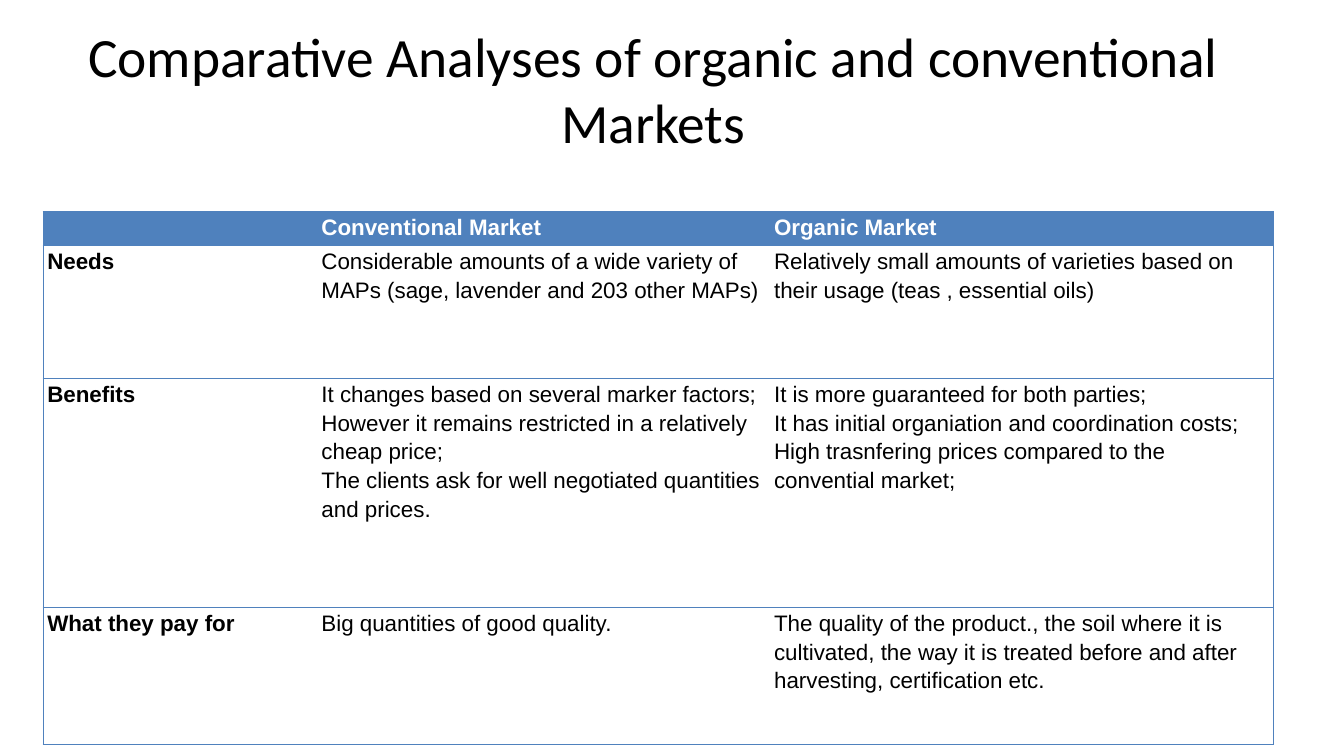
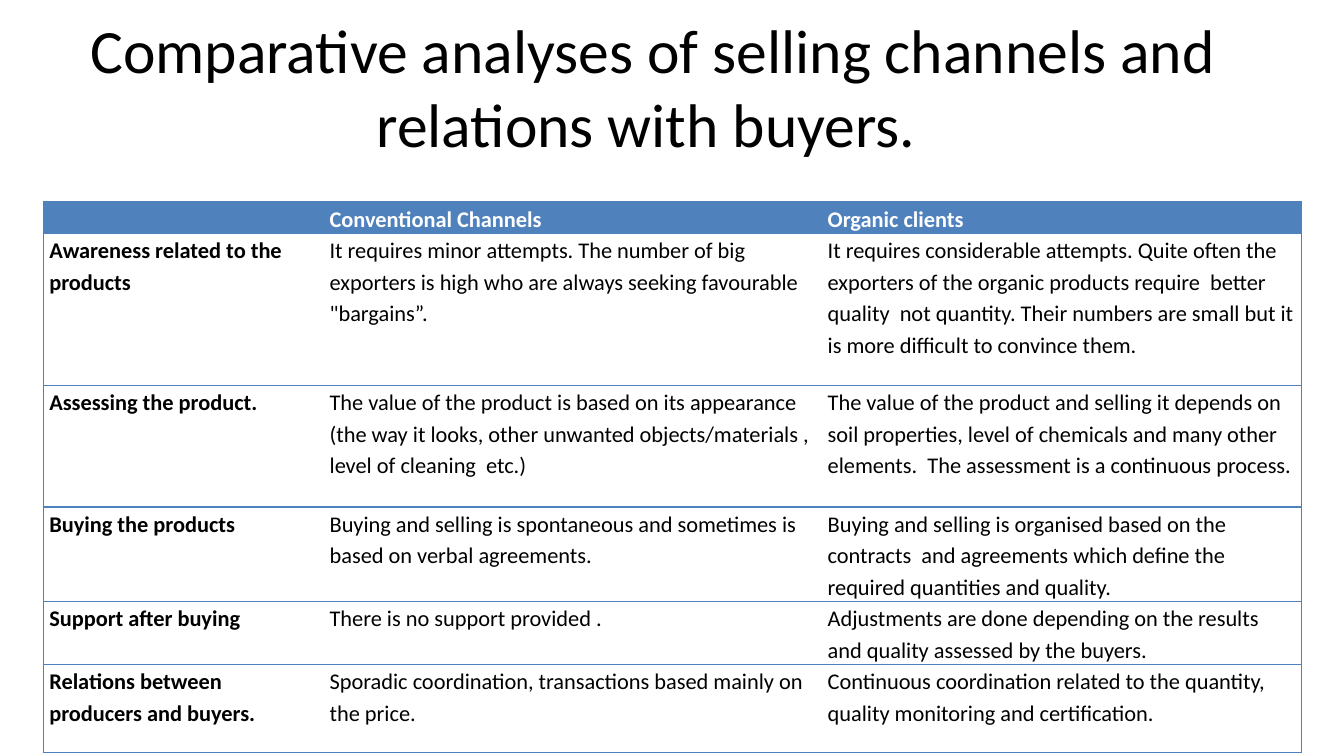
from lxml.etree import SubElement
from pptx import Presentation
from pptx.dml.color import RGBColor
from pptx.enum.text import MSO_ANCHOR, MSO_AUTO_SIZE, PP_ALIGN
from pptx.oxml.ns import qn
from pptx.util import Inches, Pt

HUES = {"ink": "000000", "blue": "4F81BD", "paper": "FFFFFF"}


def style(font, face, size, hue, bold=False):
    font.name = face
    font.size = Pt(size)
    font.bold = bold
    font.color.rgb = RGBColor.from_string(HUES[hue])


class Deck:
    """Holds the style and the current slide; lengths are percents of the slide."""

    left = 3.22
    body = 16

    def __init__(self):
        self.show = Presentation()
        self.show.slide_width = Inches(13.33)
        self.show.slide_height = Inches(7.5)
        self.slide = None

    def wide(self, share):
        return int(self.show.slide_width * share / 100)

    def high(self, share):
        return int(self.show.slide_height * share / 100)

    def title(self, text, size, height):
        """Starts a slide with its heading."""
        self.slide = self.show.slides.add_slide(self.show.slide_layouts[5])
        box = self.slide.shapes.title
        box.left, box.top = self.wide(self.left), self.high(1.5)
        box.width, box.height = self.wide(90.77), self.high(height)
        frame = box.text_frame
        frame.text = text
        frame.word_wrap = True
        frame.auto_size = MSO_AUTO_SIZE.NONE
        frame.vertical_anchor = MSO_ANCHOR.MIDDLE
        line = frame.paragraphs[0]
        line.alignment = PP_ALIGN.CENTER
        style(line.runs[0].font, "Calibri", size, "ink")

    def table(self, top, cols, rows, data, face, pad):
        frame = self.slide.shapes.add_table(
            len(rows), len(cols), self.wide(self.left), self.high(top),
            self.wide(sum(cols)), self.high(sum(rows)))
        grid = frame.table
        grid.horz_banding = False
        for col, share in zip(grid.columns, cols):
            col.width = self.wide(share)
        for row, share in zip(grid.rows, rows):
            row.height = self.high(share)
        for r, texts in enumerate(data):
            for c, text in enumerate(texts):
                cell = grid.cell(r, c)
                sides = "TB" + "L" * (c == 0) + "R" * (c == len(cols) - 1)
                self.edge(cell, sides)
                self.fill(cell, r == 0)
                self.label(cell, text, face, pad, r == 0, c == 0)

    def edge(self, cell, sides):
        """Draws the named sides of a cell and clears the others."""
        props = cell._tc.get_or_add_tcPr()
        for side in "LRTB":
            line = SubElement(props, qn("a:ln" + side), w=str(Pt(1)))
            if side in sides:
                fill = SubElement(line, qn("a:solidFill"))
                SubElement(fill, qn("a:srgbClr"), val=HUES["blue"])
            else:
                SubElement(line, qn("a:noFill"))

    def fill(self, cell, head):
        if head:
            cell.fill.solid()
            cell.fill.fore_color.rgb = RGBColor.from_string(HUES["blue"])
        else:
            cell.fill.background()

    def label(self, cell, text, face, pad, head, first):
        cell.margin_left = cell.margin_right = Inches(pad)
        cell.margin_top = cell.margin_bottom = 0
        cell.text_frame.text = text
        for line in cell.text_frame.paragraphs:
            line.line_spacing = 1.15
            for run in line.runs:
                style(run.font, face, self.body,
                      "paper" if head else "ink", head or first)
            # Keeps an empty cell from growing its row
            SubElement(line._p, qn("a:endParaRPr"), sz=str(self.body * 100))


MARKETS = [
    ["", "Conventional Market", "Organic Market"],
    ["Needs",
     "Considerable amounts of a wide variety of MAPs (sage, lavender and 203 other MAPs)",
     "Relatively small amounts of varieties based on their usage (teas , essential oils)"],
    ["Benefits",
     "It changes based on several marker factors; However it remains restricted "
     "in a relatively cheap price;\n"
     "The clients ask for well negotiated quantities and prices.",
     "It is more guaranteed for both parties;\n"
     "It has initial organiation and coordination costs;\n"
     "High trasnfering prices compared to the convential market;"],
    ["What they pay for",
     "Big quantities of good quality.",
     "The quality of the product., the soil where it is cultivated, the way it is "
     "treated before and after harvesting, certification etc."],
]

CHANNELS = [
    ["", "Conventional Channels", "Organic clients"],
    ["Awareness related to the products",
     "It requires minor attempts. The number of big exporters is high who are "
     "always seeking favourable \"bargains”.",
     "It requires considerable attempts. Quite often the exporters of the organic "
     "products require  better quality  not quantity. Their numbers are small but "
     "it is more difficult to convince them."],
    ["Assessing the product.",
     "The value of the product is based on its appearance (the way it looks, other "
     "unwanted objects/materials , level of cleaning  etc.)",
     "The value of the product and selling it depends on soil properties, level of "
     "chemicals and many other elements.  The assessment is a continuous process."],
    ["Buying the products",
     "Buying and selling is spontaneous and sometimes is based on verbal agreements.",
     "Buying and selling is organised based on the contracts  and agreements which "
     "define the required quantities and quality."],
    ["Support after buying",
     "There is no support provided .",
     "Adjustments are done depending on the results and quality assessed by the buyers."],
    ["Relations between producers and buyers.",
     "Sporadic coordination, transactions based mainly on the price.",
     "Continuous coordination related to the quantity, quality monitoring and "
     "certification."],
]


def main():
    deck = Deck()
    deck.title("Comparative Analyses of organic and conventional Markets", 39.6, 20.4)
    deck.table(28, [20.4, 33.68, 37.43], [4.5, 17.6, 30.3, 18.1],
               MARKETS, "Arial", 0.04)
    deck.title("Comparative analyses of selling channels and relations with buyers. ",
               44, 19.7)
    deck.table(26.7, [20.86, 37.06, 35.71], [3.7, 20.1, 16.1, 11.7, 7.6, 11.7],
               CHANNELS, "Calibri", 0.06)
    deck.show.save("out.pptx")


if __name__ == "__main__":
    main()
